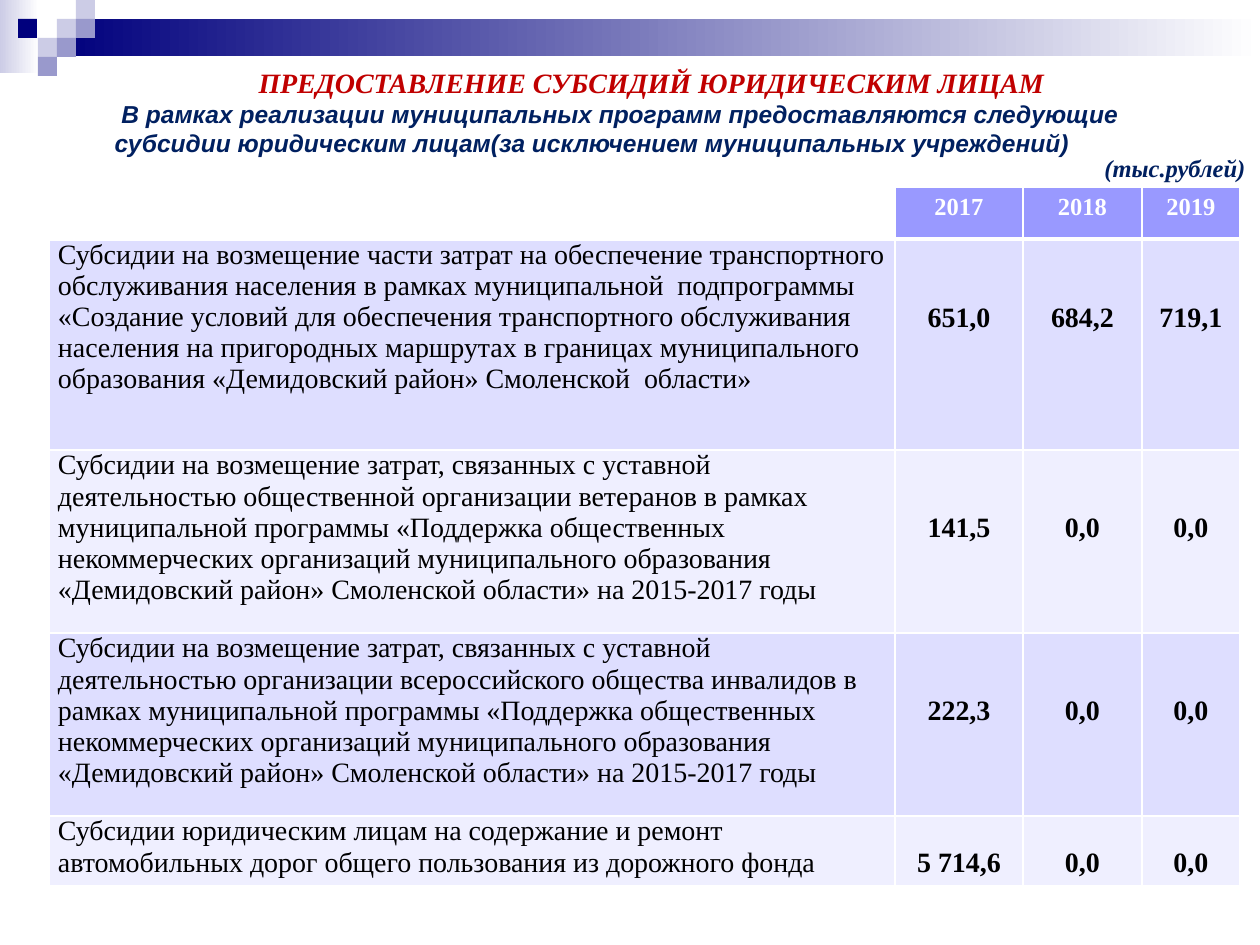
from lxml.etree import SubElement
from pptx import Presentation
from pptx.dml.color import RGBColor
from pptx.enum.shapes import MSO_SHAPE
from pptx.enum.text import MSO_ANCHOR, MSO_AUTO_SIZE, PP_ALIGN
from pptx.oxml import parse_xml
from pptx.oxml.ns import nsdecls
from pptx.util import Pt

PX = 914400 / 126
WHITE = RGBColor(0xFF, 0xFF, 0xFF)
BLACK = RGBColor(0, 0, 0)
NAVY = RGBColor(0, 0, 0x7D)
LAVENDER = RGBColor(0xCC, 0xCC, 0xE6)
VIOLET = RGBColor(0x99, 0x99, 0xCC)
HEADER = RGBColor(0x99, 0x99, 0xFF)
BAND_DARK = RGBColor(0xDE, 0xDE, 0xFF)
BAND_LIGHT = RGBColor(0xEF, 0xEF, 0xFF)
RED = RGBColor(0xC0, 0, 0)
BLUE = RGBColor(0, 0x20, 0x60)
SERIF = "Times New Roman"


def px(*lengths):
    return [round(length * PX) for length in lengths]


def style(para, font_name, size, color, bold=True, italic=False):
    font = para.font
    font.name, font.size, font.bold, font.italic = font_name, Pt(size), bold, italic
    font.color.rgb = color


deck = Presentation()
deck.slide_width, deck.slide_height = px(1260, 945)
page = deck.slides.add_slide(deck.slide_layouts[5])

decorations = [
    (0, 0, 39, 73, [LAVENDER, WHITE]),
    (57, 19, 1203, 37, [NAVY, WHITE]),
    (57, 19, 19, 19, [LAVENDER]),
    (76, 0, 19, 19, [LAVENDER]),
    (76, 19, 19, 19, [VIOLET]),
    (38, 38, 19, 19, [LAVENDER]),
    (18, 19, 19, 19, [NAVY]),
    (57, 38, 19, 19, [VIOLET]),
    (38, 57, 19, 19, [VIOLET]),
]
for left, top, width, height, colors in decorations:
    box = page.shapes.add_shape(MSO_SHAPE.RECTANGLE, *px(left, top, width, height))
    box.shadow.inherit = False
    box.line.fill.background()
    if len(colors) == 1:
        box.fill.solid()
        box.fill.fore_color.rgb = colors[0]
    else:
        box.fill.gradient()
        box.fill.gradient_angle = 0
        for stop, color in zip(box.fill.gradient_stops, colors):
            stop.color.rgb = color

rows = [
    ("Субсидии на возмещение части затрат на обеспечение транспортного обслуживания "
     "населения в рамках муниципальной  подпрограммы «Создание условий для обеспечения "
     "транспортного обслуживания населения на пригородных маршрутах в границах "
     "муниципального образования «Демидовский район» Смоленской  области»",
     "651,0", "684,2", "719,1"),
    ("Субсидии на возмещение затрат, связанных с уставной деятельностью общественной "
     "организации ветеранов в рамках муниципальной программы «Поддержка общественных "
     "некоммерческих организаций муниципального образования «Демидовский район» "
     "Смоленской области» на 2015-2017 годы",
     "141,5", "0,0", "0,0"),
    ("Субсидии на возмещение затрат, связанных с уставной деятельностью организации "
     "всероссийского общества инвалидов в рамках муниципальной программы «Поддержка "
     "общественных некоммерческих организаций муниципального образования «Демидовский "
     "район» Смоленской области» на 2015-2017 годы",
     "222,3", "0,0", "0,0"),
    ("Субсидии юридическим лицам на содержание и ремонт автомобильных дорог общего "
     "пользования из дорожного фонда",
     "5 714,6", "0,0", "0,0"),
]
column_widths = px(846, 128, 119, 98)
row_heights = px(52, 211, 183, 183, 70)
value_tops = [6, 63, 63, 63, 32]

table = page.shapes.add_table(5, 4, *px(49, 187, 1191, 699)).table
for column, width in zip(table.columns, column_widths):
    column.width = width
for row, height in zip(table.rows, row_heights):
    row.height = height

for row_index, texts in enumerate([("", "2017", "2018", "2019"), *rows]):
    for column_index, text in enumerate(texts):
        cell = table.cell(row_index, column_index)
        is_header, is_label = row_index == 0, column_index == 0
        if is_header and is_label:
            cell.fill.background()
        else:
            cell.fill.solid()
            band = BAND_DARK if row_index % 2 else BAND_LIGHT
            cell.fill.fore_color.rgb = HEADER if is_header else band
        if not is_header:
            side = 9 if is_label else 1
            top = 0 if is_label else value_tops[row_index]
            cell.margin_left, cell.margin_right, cell.margin_top, cell.margin_bottom = px(
                side, side, top, 0)
        if text:
            cell.text = text
            para = cell.text_frame.paragraphs[0]
            para.alignment = PP_ALIGN.LEFT if is_label else PP_ALIGN.CENTER
            style(para, SERIF, 14 if is_header else 16,
                  WHITE if is_header else BLACK, bold=not is_label)
        properties = cell._tc.get_or_add_tcPr()
        for position, edge in enumerate(("lnL", "lnR", "lnT", "lnB")):
            thick = (row_index, edge) in ((0, "lnB"), (1, "lnT"))
            border = parse_xml(
                f'<a:{edge} {nsdecls("a")} w="{Pt(3 if thick else 1)}"><a:solidFill>'
                f'<a:srgbClr val="{WHITE}"/></a:solidFill></a:{edge}>')
            properties.insert(position, border)

title = page.shapes.title
title.left, title.top, title.width, title.height = px(39, 59, 1162, 115)
frame = title.text_frame
frame.word_wrap = True
frame.auto_size = MSO_AUTO_SIZE.NONE
frame.vertical_anchor = MSO_ANCHOR.TOP
heading = [
    ("ПРЕДОСТАВЛЕНИЕ СУБСИДИЙ ЮРИДИЧЕСКИМ ЛИЦАМ", PP_ALIGN.CENTER, SERIF, 16, RED),
    (" В рамках реализации муниципальных программ предоставляются следующие",
     PP_ALIGN.LEFT, "Arial", 14, BLUE),
    ("субсидии юридическим лицам(за исключением муниципальных учреждений)",
     PP_ALIGN.LEFT, "Arial", 14, BLUE),
]
frame.text = "\n".join(line[0] for line in heading)
for para, (_, alignment, font_name, size, color) in zip(frame.paragraphs, heading):
    para.alignment = alignment
    para.space_before = Pt(0)
    style(para, font_name, size, color, italic=True)
    paragraph_properties = para._p.get_or_add_pPr()
    paragraph_properties.set("marL", "0")
    paragraph_properties.set("indent", str(px(63)[0]))

unit_box = page.shapes.add_textbox(*px(1092, 147, 168, 43))
unit_box.text_frame.word_wrap = False
unit_box.text_frame.text = "(тыс.рублей)"
style(unit_box.text_frame.paragraphs[0], SERIF, 14, BLUE, italic=True)

deck.save("out.pptx")
